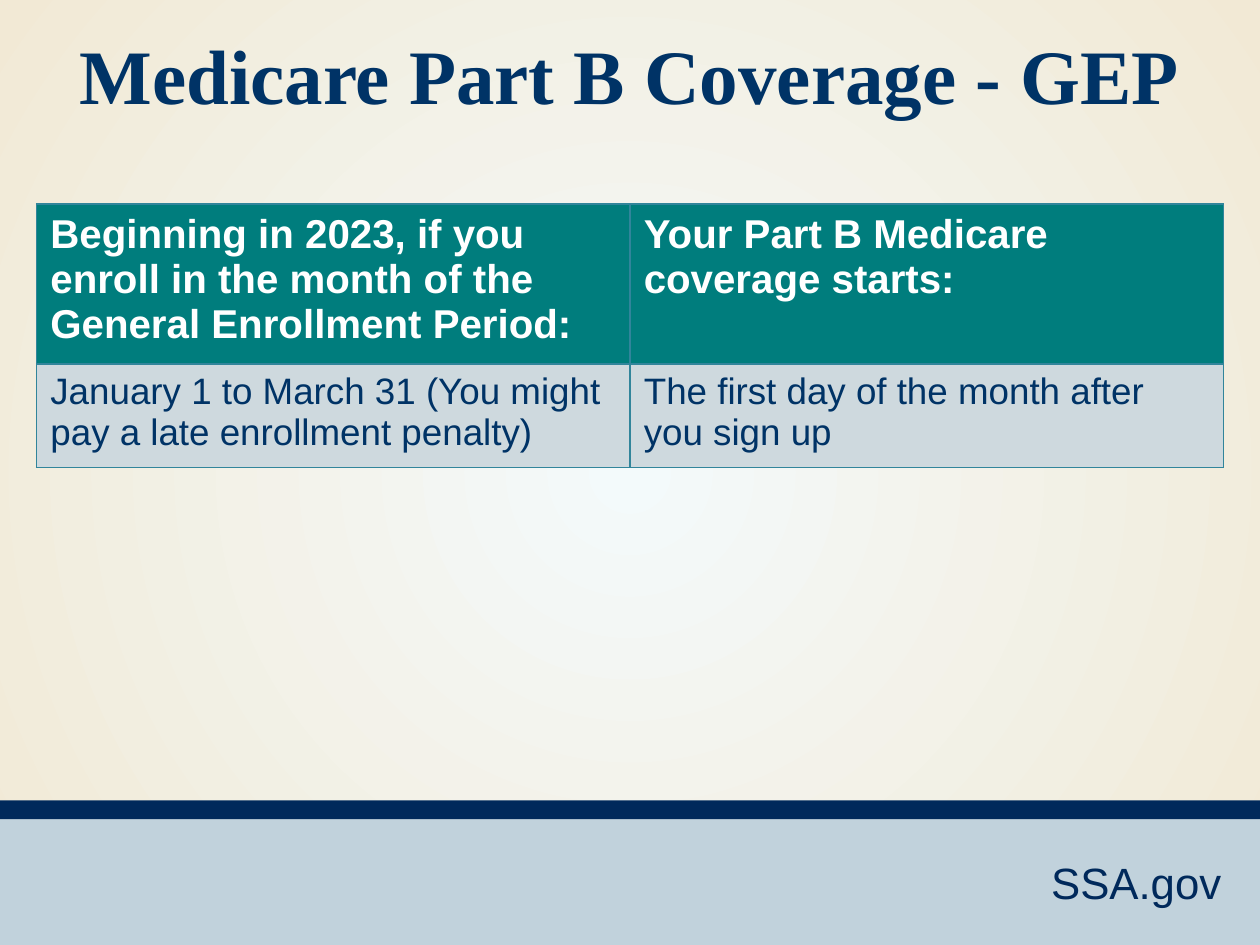
import pptx
import pptx.dml.color
import pptx.enum.shapes
import pptx.enum.text
import pptx.oxml
import pptx.oxml.ns
import pptx.util

THEME = {
    "centre": "F3FAFB", "edge": "F2E9D5", "band": "C1D2DC", "stripe": "00295B",
    "text": "003366", "header": "007D7D", "row": "CED9DE", "border": "31859B",
    "white": "FFFFFF", "title_font": "Times New Roman", "body_font": "Arial",
    "title_size": 44, "site_size": 25, "header_size": 23, "row_size": 21,
}
NAMESPACE = pptx.oxml.ns.nsdecls("a")
ALIGN = pptx.enum.text.PP_ALIGN
ANCHOR = pptx.enum.text.MSO_ANCHOR


def rgb(name):
    return pptx.dml.color.RGBColor.from_string(THEME[name])


def write(text_frame, text, color, align, **font_format):
    paragraph = text_frame.paragraphs[0]
    paragraph.alignment = align
    run = paragraph.add_run()
    run.text = text
    run.font.color.rgb = rgb(color)
    for attribute, value in font_format.items():
        setattr(run.font, attribute, value)


presentation = pptx.Presentation()
presentation.slide_width = pptx.util.Inches(10)
presentation.slide_height = pptx.util.Inches(7.5)
width, height = presentation.slide_width, presentation.slide_height
slide = presentation.slides.add_slide(presentation.slide_layouts[5])

# Radial background
background = slide.background.fill
background.gradient()
for stop, name in zip(background.gradient_stops, ("centre", "edge")):
    stop.color.rgb = rgb(name)
linear = slide.background._cSld.find(".//" + pptx.oxml.ns.qn("a:lin"))
linear.getparent().replace(linear, pptx.oxml.parse_xml(
    f'<a:path {NAMESPACE} path="circle">'
    '<a:fillToRect l="50000" t="50000" r="50000" b="50000"/></a:path>'))

# Footer band, stripe and site address
for name, top, bottom in (("band", 0.86, 1), ("stripe", 0.847, 0.867)):
    bar = slide.shapes.add_shape(
        pptx.enum.shapes.MSO_SHAPE.RECTANGLE,
        0, int(height * top), width, int(height * (bottom - top)))
    bar.shadow.inherit = False
    bar.fill.solid()
    bar.fill.fore_color.rgb = rgb(name)
    bar.line.fill.background()

site = slide.shapes.add_textbox(
    int(width * 0.672), int(height * 0.899), int(width * 0.307), int(height * 0.07))
site.text_frame.word_wrap = True
write(site.text_frame, "SSA.gov", "stripe", ALIGN.RIGHT,
      name=THEME["body_font"], size=pptx.util.Pt(THEME["site_size"]))

# Title
title = slide.shapes.title
title_place = {"left": 0, "top": int(height * 0.023),
               "width": width, "height": int(height * 0.11)}
for attribute, value in title_place.items():
    setattr(title, attribute, value)
title.text_frame.vertical_anchor = ANCHOR.MIDDLE
write(title.text_frame, "Medicare Part B Coverage - GEP", "text", ALIGN.CENTER,
      name=THEME["title_font"], size=pptx.util.Pt(THEME["title_size"]), bold=True)

# Enrollment table
ROWS = [
    ("Beginning in 2023, if you enroll in the month of the General Enrollment Period:",
     "Your Part B Medicare coverage starts:"),
    ("January 1 to March 31 (You might pay a late enrollment penalty)",
     "The first day of the month after you sign up"),
]
ROW_STYLES = [("header", "white", "header_size", True, 0.159),
              ("row", "text", "row_size", False, 0.102)]
CELL_FORMAT = {
    "margin_left": pptx.util.Inches(0.11), "margin_right": pptx.util.Inches(0.11),
    "margin_top": pptx.util.Inches(0.06), "margin_bottom": pptx.util.Inches(0.06),
    "vertical_anchor": ANCHOR.TOP,
}
margin = int(width * 0.029)
table = slide.shapes.add_table(
    len(ROWS), len(ROWS[0]), margin, int(height * 0.216),
    width - 2 * margin, int(height * 0.261)).table

for row, texts, style in zip(table.rows, ROWS, ROW_STYLES):
    fill, color, size, bold, share = style
    row.height = int(height * share)
    for cell, text in zip(row.cells, texts):
        for attribute, value in CELL_FORMAT.items():
            setattr(cell, attribute, value)
        write(cell.text_frame, text, color, ALIGN.LEFT, name=THEME["body_font"],
              size=pptx.util.Pt(THEME[size]), bold=bold)
        properties = cell._tc.get_or_add_tcPr()
        for side in ("lnL", "lnR", "lnT", "lnB"):
            properties.append(pptx.oxml.parse_xml(
                f'<a:{side} {NAMESPACE} w="{pptx.util.Pt(1)}"><a:solidFill>'
                f'<a:srgbClr val="{THEME["border"]}"/></a:solidFill></a:{side}>'))
        cell.fill.solid()
        cell.fill.fore_color.rgb = rgb(fill)

presentation.save("out.pptx")
